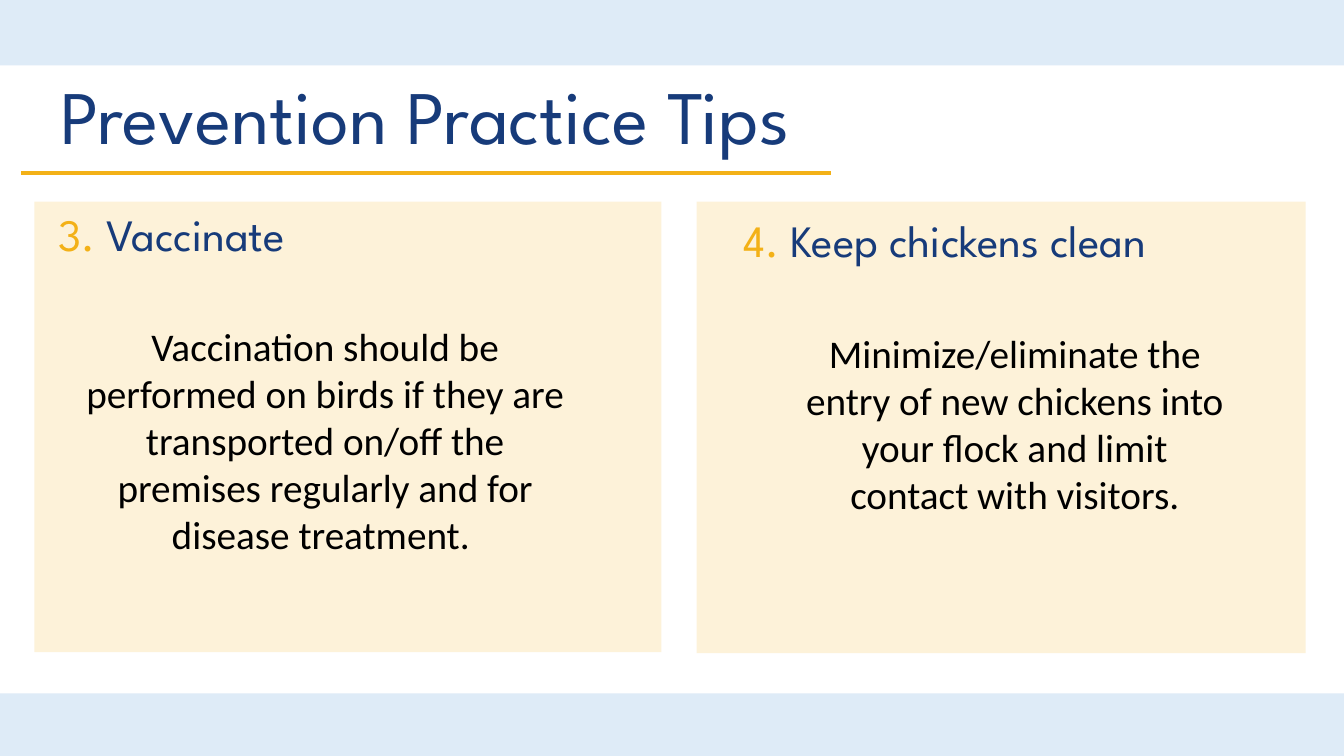
from dataclasses import dataclass

from lxml.etree import SubElement
from pptx import Presentation
from pptx.dml.color import RGBColor
from pptx.enum.shapes import MSO_CONNECTOR, MSO_SHAPE
from pptx.enum.text import MSO_ANCHOR, MSO_AUTO_SIZE, PP_ALIGN
from pptx.oxml.ns import qn
from pptx.util import Inches, Pt

TITLE = "Prevention Practice Tips"

# Boxes are (left, top, width, height) in inches
TIPS = [
    {
        "number": "3. ",
        "heading": "Vaccinate",
        "advice": "Vaccination should be performed on birds if they are transported "
                  "on/off the premises regularly and for disease treatment. ",
        "panel_box": (0.34, 2, 6.22, 4.47),
        "heading_box": (0, 2, 3.41, 0.64),
        "advice_box": (0.71, 3.15, 5.03, 2.93),
    },
    {
        "number": "4. ",
        "heading": "Keep chickens clean",
        "advice": "Minimize/eliminate the entry of new chickens into your flock "
                  "and limit contact with visitors.",
        "panel_box": (6.91, 2, 6.04, 4.48),
        "heading_box": (6.9, 2.06, 4.95, 0.64),
        "advice_box": (7.86, 3.22, 4.41, 1.99),
    },
]

SLIDE_W, SLIDE_H = 13.33, 7.5
BANDS = [(0, 0, SLIDE_W, 0.65), (0, 6.88, SLIDE_W, SLIDE_H - 6.88)]
TITLE_BOX = (-0.05, 0.53, 8.53, 1.12)
RULE = (0.21, 1.72, 8.24, 1.72)


@dataclass(frozen=True)
class Theme:
    navy: RGBColor = RGBColor(0x17, 0x3B, 0x7A)
    gold: RGBColor = RGBColor(0xF3, 0xB1, 0x17)
    pale_blue: RGBColor = RGBColor(0xDE, 0xEB, 0xF7)
    black: RGBColor = RGBColor(0, 0, 0)
    panel_opacity: int = 16
    display_font: str = "League Spartan"
    body_font: str = "Calibri"
    title_size: Pt = Pt(54)
    heading_size: Pt = Pt(32)
    body_size: Pt = Pt(28)
    rule_width: Pt = Pt(3)


THEME = Theme()


def inches(values):
    return [Inches(v) for v in values]


def add_rect(slide, box, color, opacity=100):
    sp = slide.shapes.add_shape(MSO_SHAPE.RECTANGLE, *inches(box))
    sp.shadow.inherit = False
    sp.line.fill.background()
    sp.fill.solid()
    sp.fill.fore_color.rgb = color
    if opacity < 100:
        clr = sp._element.spPr.find(qn("a:solidFill"))[0]
        SubElement(clr, qn("a:alpha")).set("val", str(opacity * 1000))


def add_rule(slide, ends):
    line = slide.shapes.add_connector(MSO_CONNECTOR.STRAIGHT, *inches(ends))
    line.line.color.rgb = THEME.gold
    line.line.width = THEME.rule_width
    SubElement(line._element.spPr, qn("a:effectLst"))


def write_centred(tf, runs, font, size):
    """Fill the first paragraph with (text, colour) runs sharing one font."""
    p = tf.paragraphs[0]
    p.alignment = PP_ALIGN.CENTER
    p.font.name, p.font.size = font, size
    for text, color in runs:
        r = p.add_run()
        r.text = text
        r.font.color.rgb = color
    return p


def add_text(slide, box, runs, font, size):
    tf = slide.shapes.add_textbox(*inches(box)).text_frame
    tf.word_wrap = True
    tf.auto_size = MSO_AUTO_SIZE.SHAPE_TO_FIT_TEXT
    write_centred(tf, runs, font, size)


def set_title(slide):
    title = slide.shapes.title
    title.left, title.top, title.width, title.height = inches(TITLE_BOX)
    tf = title.text_frame
    tf.vertical_anchor = MSO_ANCHOR.BOTTOM
    tf.auto_size = MSO_AUTO_SIZE.NONE
    p = write_centred(tf, [(TITLE, THEME.navy)], THEME.display_font, THEME.title_size)
    p.line_spacing = 0.9


def main():
    prs = Presentation()
    prs.slide_width, prs.slide_height = inches((SLIDE_W, SLIDE_H))
    slide = prs.slides.add_slide(prs.slide_layouts.get_by_name("Title Only"))

    for band in BANDS:
        add_rect(slide, band, THEME.pale_blue)
    set_title(slide)
    add_rule(slide, RULE)

    for tip in TIPS:
        add_rect(slide, tip["panel_box"], THEME.gold, THEME.panel_opacity)
        heading = [(tip["number"], THEME.gold), (tip["heading"], THEME.navy)]
        add_text(slide, tip["heading_box"], heading, THEME.display_font, THEME.heading_size)
        advice = [(tip["advice"], THEME.black)]
        add_text(slide, tip["advice_box"], advice, THEME.body_font, THEME.body_size)

    prs.save("out.pptx")


if __name__ == "__main__":
    main()
